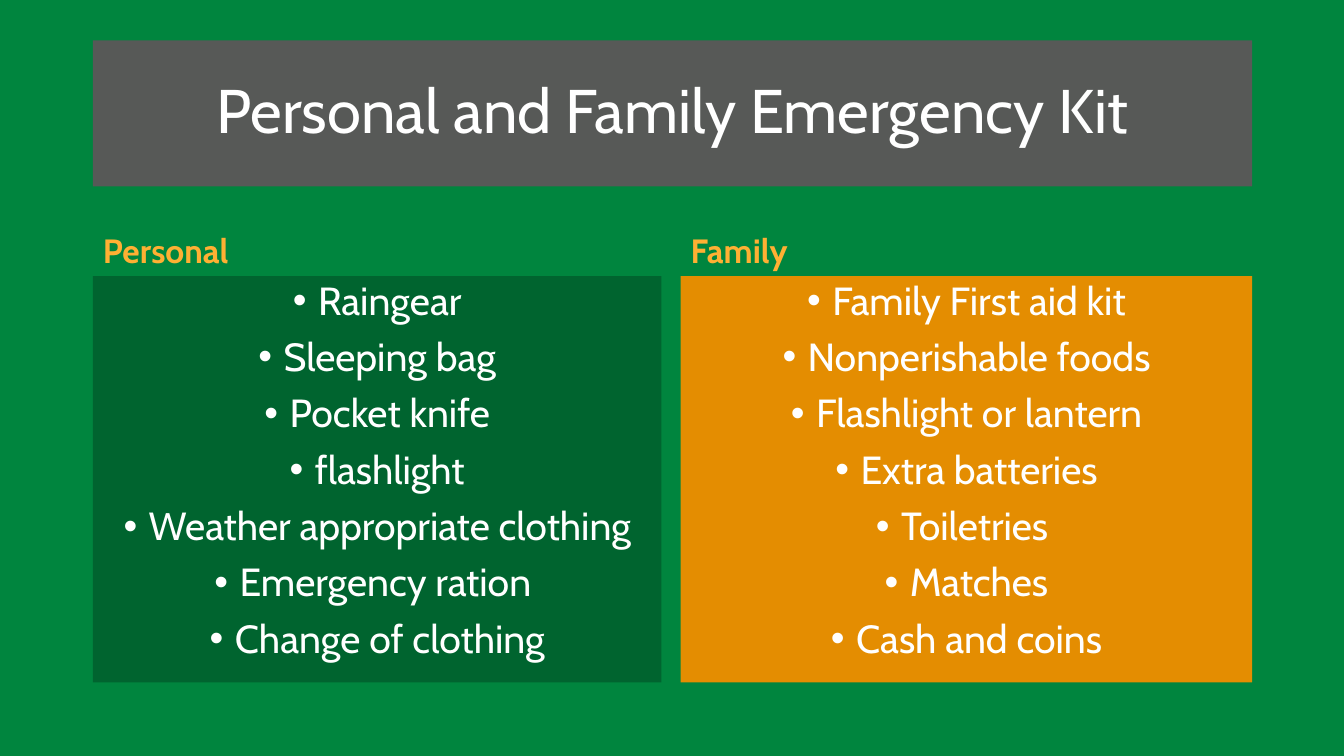
"""Build the emergency kit comparison slide."""
from dataclasses import dataclass

import lxml.etree
import pptx
import pptx.dml.color
import pptx.enum.text
import pptx.oxml.ns
import pptx.util

Inches = pptx.util.Inches
Pt = pptx.util.Pt
ALIGN = pptx.enum.text.PP_ALIGN
ANCHOR = pptx.enum.text.MSO_ANCHOR


@dataclass(frozen=True)
class Theme:
    """Colours, font and type sizes of the slide."""
    font: str = "Cabin"
    background: str = "00853E"
    banner: str = "575957"
    personal: str = "00642F"
    family: str = "E48D01"
    heading: str = "FEB033"
    text: str = "FFFFFF"
    title_size: int = 44
    heading_size: int = 24
    list_size: int = 28


class KitSlide:
    """Fill the placeholders of one comparison slide in a given theme."""

    def __init__(self, presentation, theme):
        """Add the slide and colour its background."""
        self.theme = theme
        self.slide = presentation.slides.add_slide(presentation.slide_layouts[4])
        self.paint(self.slide.background.fill, theme.background)

    def paint(self, fill, color):
        """Make a fill solid in the given colour."""
        fill.solid()
        fill.fore_color.rgb = pptx.dml.color.RGBColor.from_string(color)

    def place(self, index, box, anchor):
        """Move a placeholder and return it with its text frame prepared."""
        holder = self.slide.placeholders[index]
        holder.left, holder.top, holder.width, holder.height = map(Inches, box)
        frame = holder.text_frame
        frame.word_wrap = True
        frame.auto_size = pptx.enum.text.MSO_AUTO_SIZE.NONE
        frame.vertical_anchor = anchor
        return holder

    def format(self, frame, size, color, align, bold=False):
        """Format every paragraph and run of a text frame."""
        for number, paragraph in enumerate(frame.paragraphs):
            paragraph.alignment = align
            paragraph.line_spacing = 0.9
            paragraph.space_before = Pt(10 if number else 0)
            for run in paragraph.runs:
                run.font.name = self.theme.font
                run.font.size = Pt(size)
                run.font.bold = bold
                run.font.color.rgb = pptx.dml.color.RGBColor.from_string(color)

    def title(self, text, box):
        """Write the title on its banner."""
        banner = self.place(0, box, ANCHOR.MIDDLE)
        self.paint(banner.fill, self.theme.banner)
        banner.text_frame.text = text
        self.format(banner.text_frame, self.theme.title_size, self.theme.text, ALIGN.CENTER)

    def heading(self, index, text, box):
        """Write the heading above a list."""
        frame = self.place(index, box, ANCHOR.BOTTOM).text_frame
        frame.text = text
        self.format(frame, self.theme.heading_size, self.theme.heading, ALIGN.LEFT, bold=True)

    def checklist(self, index, items, box, color):
        """Write a centred bulleted list on a coloured panel."""
        panel = self.place(index, box, ANCHOR.TOP)
        self.paint(panel.fill, color)
        panel.text_frame.text = "\n".join(items)
        for paragraph in panel.text_frame.paragraphs:
            properties = paragraph._p.get_or_add_pPr()
            properties.set("marL", str(Inches(0.25)))
            properties.set("indent", str(Inches(-0.25)))
            for tag, name, value in (("a:buFont", "typeface", "Arial"), ("a:buChar", "char", "•")):
                lxml.etree.SubElement(properties, pptx.oxml.ns.qn(tag)).set(name, value)
        self.format(panel.text_frame, self.theme.list_size, self.theme.text, ALIGN.CENTER)


def main():
    """Build and save the presentation."""
    presentation = pptx.Presentation()
    presentation.slide_width = Inches(13.33)
    presentation.slide_height = Inches(7.5)
    theme = Theme()
    kit = KitSlide(presentation, theme)
    kit.title("Personal and Family Emergency Kit", (0.92, 0.4, 11.5, 1.45))

    personal_items = ["Raingear", "Sleeping bag", "Pocket knife", "flashlight",
                      "Weather appropriate clothing", "Emergency ration ", "Change of clothing"]
    family_items = ["Family First aid kit", "Nonperishable foods", "Flashlight or lantern",
                    "Extra batteries", "Toiletries ", "Matches", "Cash and coins"]
    panel_top, panel_height = 2.74, 4.03
    columns = [
        (1, "Personal", personal_items, theme.personal, 0.92, 5.64, 0.9),
        (3, "Family", family_items, theme.family, 6.75, 5.67, 0.54),
    ]
    for index, name, items, color, left, width, heading_height in columns:
        kit.heading(index, name, (left, panel_top - heading_height, width, heading_height))
        kit.checklist(index + 1, items, (left, panel_top, width, panel_height), color)

    presentation.save("out.pptx")


if __name__ == "__main__":
    main()
